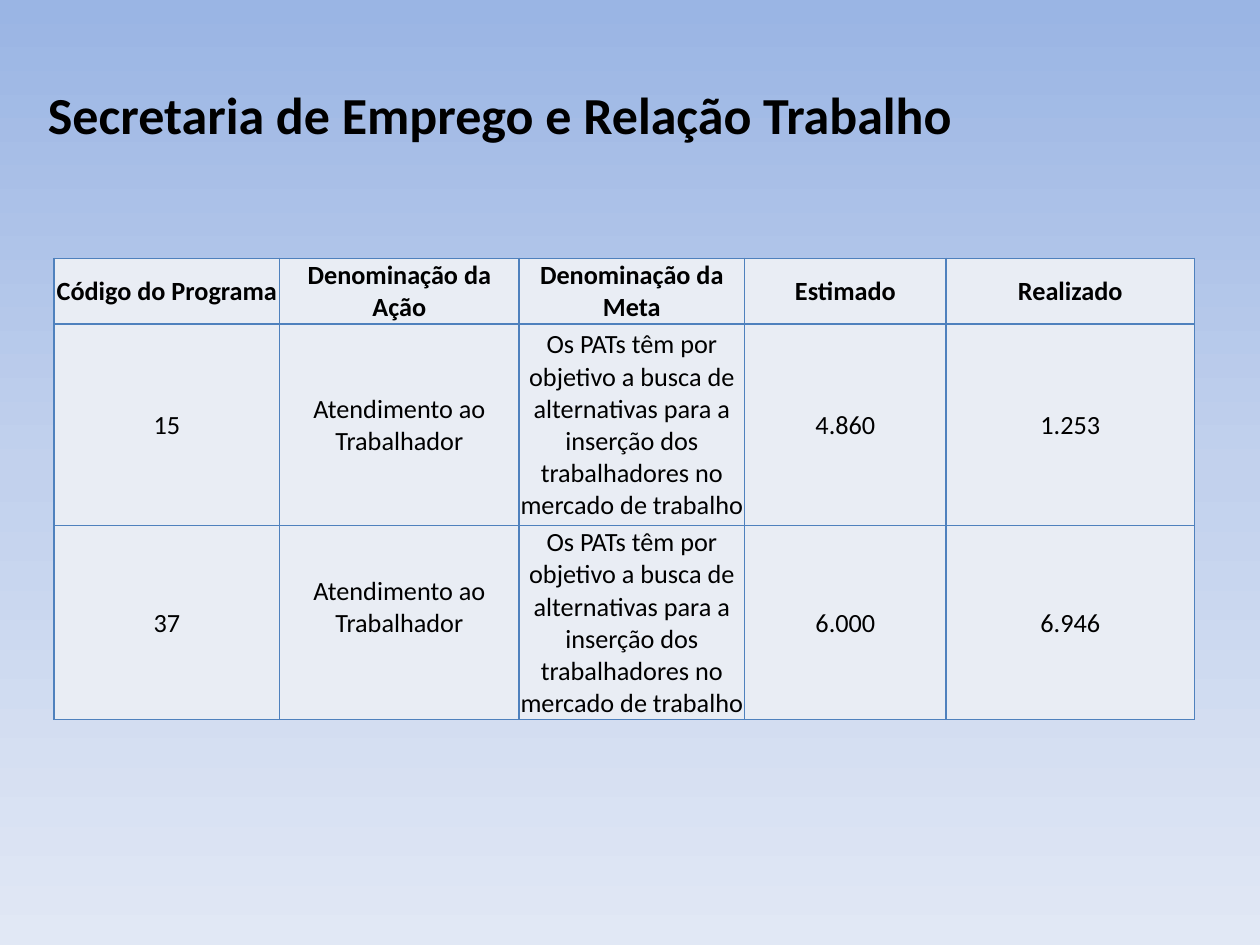
import copy
import pptx
import pptx.util
import pptx.dml.color
import pptx.enum.text
import pptx.oxml
import pptx.oxml.ns

TITLE = "Secretaria de Emprego e Relação Trabalho"
ACTION = "Atendimento ao Trabalhador"
GOAL = ("Os PATs têm por objetivo a busca de alternativas para a inserção "
        "dos trabalhadores no mercado de trabalho")
ROWS = [
    ("Código do Programa", "Denominação da Ação", "Denominação da Meta", "Estimado", "Realizado"),
    ("15", ACTION, GOAL, "4.860", "1.253"),
    ("37", ACTION, GOAL, "6.000", "6.946"),
]
COLUMN_WIDTHS = [1.79, 1.9, 1.79, 1.6, 1.97]
ROW_HEIGHTS = [0.52, 1.6, 1.54]
BACKGROUND = [(0, "9AB5E4"), (0.5, "C2D1ED"), (1, "E1E8F5")]
BLACK, CELL_FILL, BORDER = "000000", "E9EDF4", "4F81BD"
INCH = pptx.util.Inches


def color(value):
    return pptx.dml.color.RGBColor.from_string(value)


def format_text(text_frame, size, bold, alignment):
    text_frame.vertical_anchor = pptx.enum.text.MSO_ANCHOR.MIDDLE
    for paragraph in text_frame.paragraphs:
        paragraph.alignment = alignment
        for run in paragraph.runs:
            run.font.name = "Calibri"
            run.font.size = pptx.util.Pt(size)
            run.font.bold = bold
            run.font.color.rgb = color(BLACK)


def paint_background(slide):
    fill = slide.background.fill
    fill.gradient()
    fill.gradient_angle = 270
    stop_list = slide._element.find(".//" + pptx.oxml.ns.qn("a:gsLst"))
    stop_list.append(copy.deepcopy(stop_list[-1]))
    for stop, (position, value) in zip(fill.gradient_stops, BACKGROUND):
        stop.position = position
        stop.color.rgb = color(value)


def add_borders(cell):
    properties = cell._tc.get_or_add_tcPr()
    for index, side in enumerate(("lnL", "lnR", "lnT", "lnB")):
        properties.insert(index, pptx.oxml.parse_xml(
            f'<a:{side} {pptx.oxml.ns.nsdecls("a")} w="12700"><a:solidFill>'
            f'<a:srgbClr val="{BORDER}"/></a:solidFill></a:{side}>'))


def add_title(slide):
    title = slide.shapes.title
    title.left, title.top, title.width, title.height = map(INCH, (0.28, 0.5, 8.5, 0.8))
    title.text_frame.text = TITLE
    format_text(title.text_frame, 29.7, True, pptx.enum.text.PP_ALIGN.LEFT)


def add_program_table(slide):
    table = slide.shapes.add_table(
        len(ROWS), len(COLUMN_WIDTHS), INCH(0.43), INCH(2.05),
        INCH(sum(COLUMN_WIDTHS)), INCH(sum(ROW_HEIGHTS))).table
    for column, width in zip(table.columns, COLUMN_WIDTHS):
        column.width = INCH(width)
    for row, height, texts in zip(table.rows, ROW_HEIGHTS, ROWS):
        row.height = INCH(height)
        for cell, text in zip(row.cells, texts):
            cell.text_frame.text = text
            cell.margin_left = cell.margin_right = cell.margin_top = INCH(0.01)
            cell.margin_bottom = 0
            cell.fill.solid()
            cell.fill.fore_color.rgb = color(CELL_FILL)
            format_text(cell.text_frame, 15, texts is ROWS[0], pptx.enum.text.PP_ALIGN.CENTER)
            cell.vertical_anchor = pptx.enum.text.MSO_ANCHOR.MIDDLE
            add_borders(cell)
    table.cell(2, 1).margin_bottom = INCH(0.25)


def main():
    presentation = pptx.Presentation()
    presentation.slide_width, presentation.slide_height = INCH(10), INCH(7.5)
    slide = presentation.slides.add_slide(presentation.slide_layouts.get_by_name("Title Only"))
    paint_background(slide)
    add_title(slide)
    add_program_table(slide)
    presentation.save("out.pptx")


if __name__ == "__main__":
    main()
